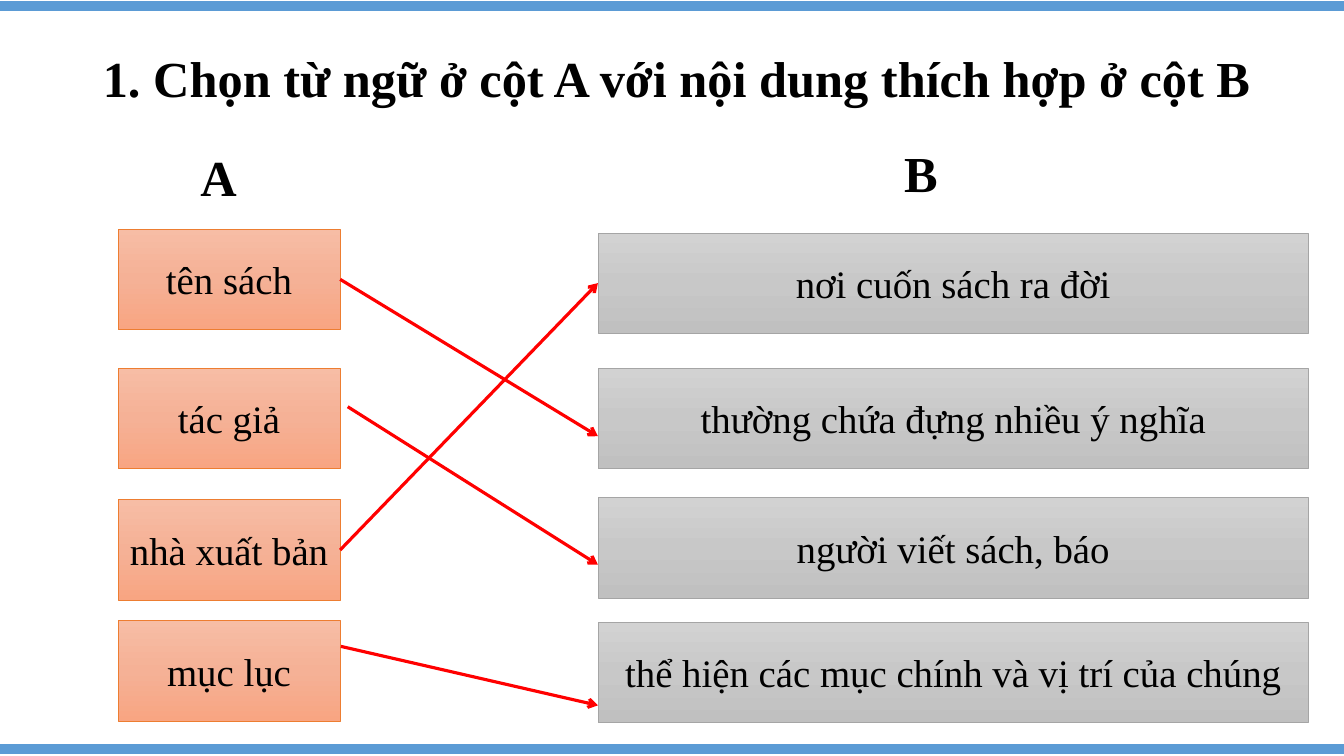
import copy

import pptx
import pptx.dml.color
import pptx.enum.shapes
import pptx.enum.text
import pptx.oxml.ns
import pptx.oxml.xmlchemy
import pptx.util

Inches, Pt = pptx.util.Inches, pptx.util.Pt
RGB = pptx.dml.color.RGBColor
PP_ALIGN = pptx.enum.text.PP_ALIGN
ANCHOR = pptx.enum.text.MSO_ANCHOR

SLIDE_W, SLIDE_H = 17.78, 10
FONT = "Times New Roman"
BLACK = RGB(0x00, 0x00, 0x00)
BLUE = RGB(0x5B, 0x9B, 0xD5)
RED = RGB(0xFF, 0x00, 0x00)
ORANGE = RGB(0xED, 0x7D, 0x31)
GREY = RGB(0xA5, 0xA5, 0xA5)
ORANGE_SHADES = [RGB(0xF7, 0xBD, 0xA5), RGB(0xF5, 0xB1, 0x96), RGB(0xF8, 0xA5, 0x82)]
GREY_SHADES = [RGB(0xD2, 0xD2, 0xD2), RGB(0xC8, 0xC8, 0xC8), RGB(0xC0, 0xC0, 0xC0)]

TITLE = "1. Chọn từ ngữ ở cột A với nội dung thích hợp ở cột B"
BOX_H = 1.33
COLUMNS = [
    {"label": "A", "label_at": (2.52, 1.86, 0.76, 0.94),
     "left": 1.56, "width": 2.94, "line": ORANGE, "shades": ORANGE_SHADES,
     "rows": [("tên sách", 3.03), ("tác giả", 4.87),
              ("nhà xuất bản", 6.61), ("mục lục", 8.21)]},
    {"label": "B", "label_at": (11.83, 1.81, 0.72, 0.94),
     "left": 7.91, "width": 9.4, "line": GREY, "shades": GREY_SHADES,
     "rows": [("nơi cuốn sách ra đời", 3.08), ("thường chứa đựng nhiều ý nghĩa", 4.87),
              ("người viết sách, báo", 6.58),
              ("thể hiện các mục chính và vị trí của chúng", 8.23)]},
]
# Row in A, row in B, start and end points; None means the middle of the box side.
MATCHES = [
    (0, 1, None, (7.91, 5.77)),
    (1, 2, (4.6, 5.38), (7.91, 7.47)),
    (2, 0, None, None),
    (3, 3, (4.51, 8.55), (7.91, 9.33)),
]
RIGHT_SIDE, LEFT_SIDE = 3, 1


def write(frame, text, size, bold=False, align=PP_ALIGN.LEFT,
          anchor=ANCHOR.TOP, inset=(0.13, 0.07)):
    frame.text = text
    frame.vertical_anchor = anchor
    frame.margin_left = frame.margin_right = Inches(inset[0])
    frame.margin_top = frame.margin_bottom = Inches(inset[1])
    paragraph = frame.paragraphs[0]
    paragraph.alignment = align
    font = paragraph.runs[0].font
    font.name, font.size, font.bold = FONT, Pt(size), bold
    font.color.rgb = BLACK


def shade(shape, colours):
    """Fill from top to bottom with three evenly spaced colours."""
    shape.fill.gradient()
    shape.fill.gradient_angle = 270
    first = shape._element.spPr.find(".//" + pptx.oxml.ns.qn("a:gs"))
    first.addnext(copy.deepcopy(first))
    for number, (stop, colour) in enumerate(zip(shape.fill.gradient_stops, colours)):
        stop.position = number / 2
        stop.color.rgb = colour


def add_box(slide, column, text, top):
    box = slide.shapes.add_shape(
        pptx.enum.shapes.MSO_SHAPE.RECTANGLE,
        *map(Inches, (column["left"], top, column["width"], BOX_H)))
    box.shadow.inherit = False
    shade(box, column["shades"])
    box.line.color.rgb = column["line"]
    box.line.width = Pt(0.5)
    box.text_frame.word_wrap = True
    write(box.text_frame, text, 37, align=PP_ALIGN.CENTER, anchor=ANCHOR.MIDDLE)
    return box


def add_line(slide, start, end, colour, width):
    line = slide.shapes.add_connector(
        pptx.enum.shapes.MSO_CONNECTOR.STRAIGHT, *map(Inches, (*start, *end)))
    line.line.color.rgb = colour
    line.line.width = Pt(width)
    line._element.spPr.append(pptx.oxml.xmlchemy.OxmlElement("a:effectLst"))
    return line


def add_arrow(slide, source, target, start, end):
    arrow = add_line(slide, start or (0, 0), end or (0, 0), RED, 3)
    if start is None:
        arrow.begin_connect(source, RIGHT_SIDE)
    if end is None:
        arrow.end_connect(target, LEFT_SIDE)
    head = pptx.oxml.xmlchemy.OxmlElement("a:tailEnd")
    head.set("type", "arrow")
    arrow.line._get_or_add_ln().append(head)


def main():
    deck = pptx.Presentation()
    deck.slide_width, deck.slide_height = Inches(SLIDE_W), Inches(SLIDE_H)
    slide = deck.slides.add_slide(deck.slide_layouts[5])

    title = slide.shapes.title
    title.left, title.top, title.width, title.height = map(
        Inches, (1.18, 0.53, 16.13, 1.01))
    write(title.text_frame, TITLE, 48, bold=True, inset=(0.18, 0.09))

    for y in (0.08, 9.91):
        add_line(slide, (0, y), (SLIDE_W, y), BLUE, 10)

    boxes = []
    for column in COLUMNS:
        label = slide.shapes.add_textbox(*map(Inches, column["label_at"]))
        label.text_frame.word_wrap = False
        write(label.text_frame, column["label"], 48, bold=True)
        boxes.append([add_box(slide, column, *row) for row in column["rows"]])

    words, meanings = boxes
    for word, meaning, start, end in MATCHES:
        add_arrow(slide, words[word], meanings[meaning], start, end)

    deck.save("out.pptx")


if __name__ == "__main__":
    main()
